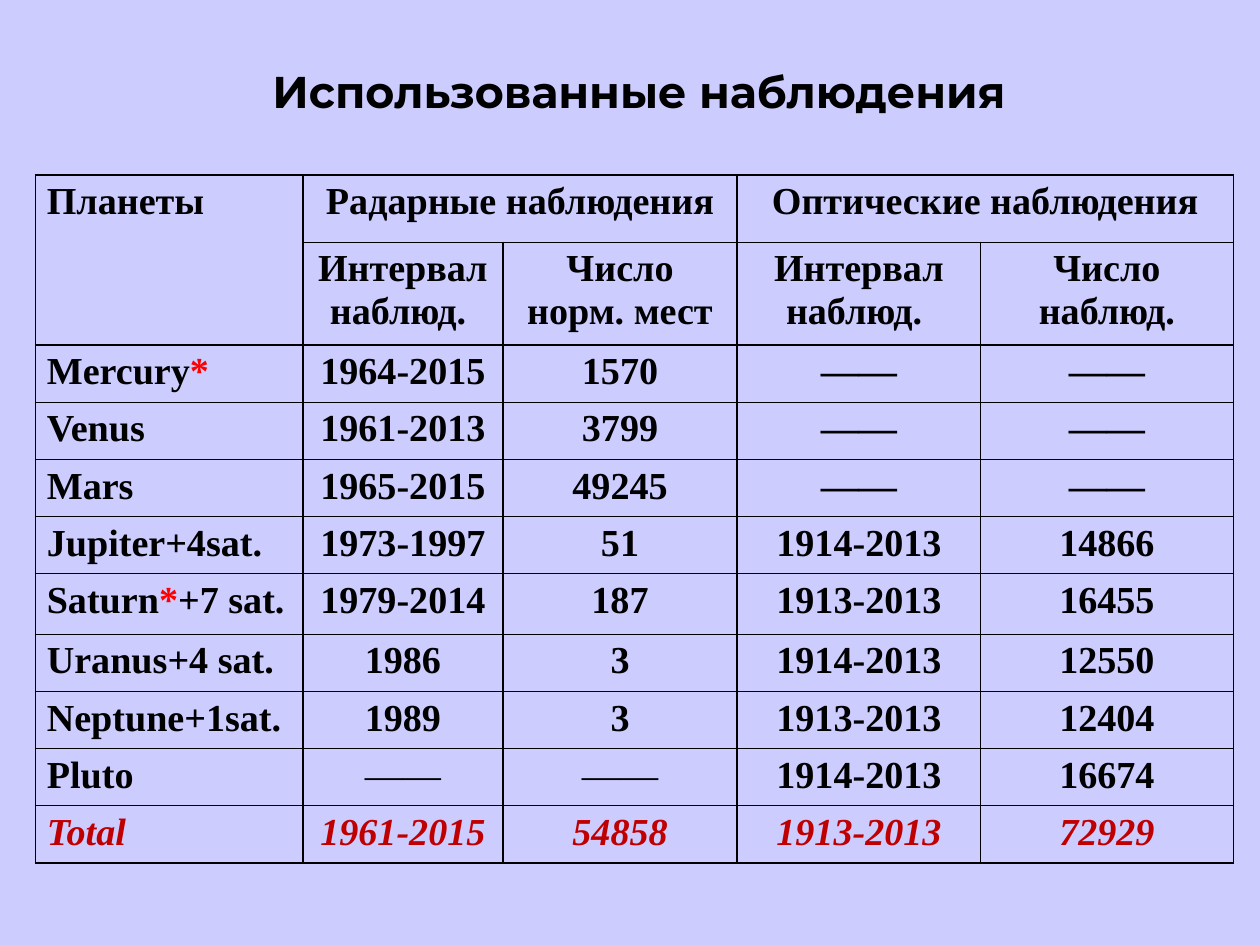
"""Build a slide with a table of planetary observations."""
from lxml import etree
from pptx import Presentation
from pptx import util as u
from pptx.dml.color import RGBColor
from pptx.enum import text
from pptx.oxml import ns

THEME = {
    "back": RGBColor.from_string("CCCCFF"),
    "ink": RGBColor.from_string("000000"),
    "star": RGBColor.from_string("FF0000"),
    "total": RGBColor.from_string("C00000"),
    "line": "000000",
    "head": {"name": "Montserrat", "size": u.Pt(28), "bold": True},
    "body": {"name": "Times New Roman", "size": u.Pt(24), "bold": True},
}
DASH = "——"
ROWS = [
    ["Планеты", "Радарные наблюдения", "", "Оптические наблюдения", ""],
    ["", "Интервал наблюд. ", "Число норм. мест", "Интервал наблюд. ", "Число наблюд."],
    ["Mercury*", "1964-2015", "1570", DASH, DASH],
    ["Venus", "1961-2013", "3799", DASH, DASH],
    ["Mars", "1965-2015", "49245", DASH, DASH],
    ["Jupiter+4sat.", "1973-1997", "51", "1914-2013", "14866"],
    ["Saturn*+7 sat.", "1979-2014", "187", "1913-2013", "16455"],
    ["Uranus+4 sat.", "1986", "3", "1914-2013", "12550"],
    ["Neptune+1sat.", "1989", "3", "1913-2013", "12404"],
    ["Pluto", DASH, DASH, "1914-2013", "16674"],
    ["Total", "1961-2015", "54858", "1913-2013", "72929"],
]
WIDTHS = [2.34, 1.75, 2.05, 2.13, 2.21]
HEIGHTS = [0.59, 0.9] + [0.5] * 4 + [0.53] + [0.5] * 4
INCH = 2.54


def write(para, words, style, color):
    run = para.add_run()
    run.text = words
    for key, value in style.items():
        setattr(run.font, key, value)
    run.font.color.rgb = color


def frame(cell):
    props = cell._tc.get_or_add_tcPr()
    for spot, side in enumerate(["lnL", "lnR", "lnT", "lnB"]):
        line = etree.Element(ns.qn(f"a:{side}"), w=str(u.Pt(1)))
        fill = etree.SubElement(line, ns.qn("a:solidFill"))
        etree.SubElement(fill, ns.qn("a:srgbClr"), val=THEME["line"])
        props.insert(spot, line)


deck = Presentation()
deck.slide_width, deck.slide_height = u.Inches(28 / INCH), u.Inches(21 / INCH)
slide = deck.slides.add_slide(deck.slide_layouts[6])
slide.background.fill.solid()
slide.background.fill.fore_color.rgb = THEME["back"]

grid = slide.shapes.add_table(
    len(ROWS), len(WIDTHS), u.Inches(0.31), u.Inches(1.53),
    u.Inches(sum(WIDTHS)), u.Inches(sum(HEIGHTS))).table
grid.first_row = grid.horz_banding = False
for col, width in zip(grid.columns, WIDTHS):
    col.width = u.Inches(width)
for row, height in zip(grid.rows, HEIGHTS):
    row.height = u.Inches(height)

for r, row in enumerate(ROWS):
    for c, words in enumerate(row):
        cell = grid.cell(r, c)
        cell.fill.background()
        frame(cell)
        para = cell.text_frame.paragraphs[0]
        para.alignment = text.PP_ALIGN.CENTER if c else text.PP_ALIGN.LEFT
        last = row[0] == "Total"
        plain = row[0] == "Pluto" and words == DASH
        style = THEME["body"] | {"bold": not plain, "italic": last}
        for part in words.partition("*"):
            color = THEME["star" if part == "*" else "total" if last else "ink"]
            if part:
                write(para, part, style, color)

for top, left, low, right in [(0, 0, 1, 0), (0, 1, 0, 2), (0, 3, 0, 4)]:
    grid.cell(top, left).merge(grid.cell(low, right))

title = slide.shapes.add_textbox(
    u.Inches(1.65), u.Inches(0.51), u.Inches(7.88), u.Inches(0.57)).text_frame
title.word_wrap = True
title.auto_size = text.MSO_AUTO_SIZE.SHAPE_TO_FIT_TEXT
title.paragraphs[0].alignment = text.PP_ALIGN.CENTER
write(title.paragraphs[0], "Использованные наблюдения", THEME["head"], THEME["ink"])

deck.save("out.pptx")
